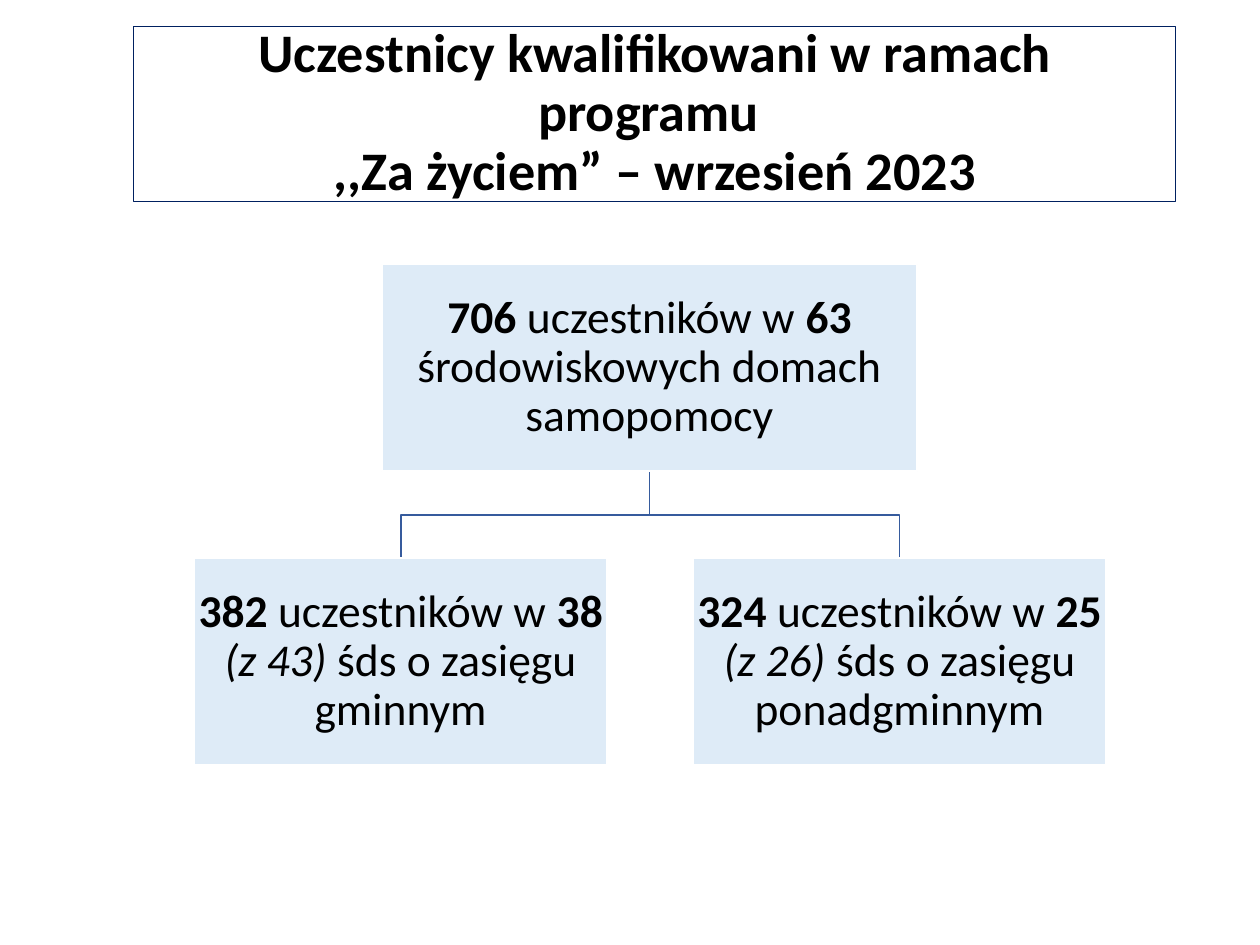
from pptx import Presentation
from pptx.dml.color import RGBColor
from pptx.enum.shapes import MSO_SHAPE
from pptx.enum.text import MSO_ANCHOR, MSO_AUTO_SIZE, PP_ALIGN
from pptx.util import Inches, Pt

BOX_H = 1.64
ROOT = (3.03, 2.1, 4.25, BOX_H)
CHILDREN = [(x, 4.43, 3.28, BOX_H) for x in (1.54, 5.5)]
ROOT_RUNS = [("706 ", "b"), ("uczestników w ", ""), ("63", "b"),
             (" środowiskowych domach samopomocy", "")]
CHILD_DATA = [("382", "38", "43", "gminnym"), ("324", "25", "26", "ponadgminnym")]


def rgb(value):
    """Return the colour for a hex string."""
    return RGBColor.from_string(value)


def set_line(sp, color, width):
    """Give a shape a solid outline."""
    sp.line.color.rgb = rgb(color)
    sp.line.width = Pt(width)


def format_paragraph(p, size):
    """Apply the slide's common paragraph style."""
    p.alignment = PP_ALIGN.CENTER
    p.line_spacing = 0.9
    p.font.name = "Calibri"
    p.font.size = Pt(size)
    p.font.color.rgb = rgb("000000")


def add_title(s, box, text):
    """Place and format the title placeholder."""
    sp = s.shapes.title
    sp.left, sp.top, sp.width, sp.height = map(Inches, box)
    set_line(sp, "002060", 0.75)
    tf = sp.text_frame
    tf.text = text
    tf.word_wrap = True
    tf.auto_size = MSO_AUTO_SIZE.NONE
    tf.vertical_anchor = MSO_ANCHOR.MIDDLE
    p = tf.paragraphs[0]
    format_paragraph(p, 31)
    p.font.bold = True


def add_node(s, box, runs):
    """Add one chart box holding runs of (text, style letters)."""
    sp = s.shapes.add_shape(MSO_SHAPE.RECTANGLE, *map(Inches, box))
    sp.shadow.inherit = False
    sp.fill.solid()
    sp.fill.fore_color.rgb = rgb("DEEBF7")
    set_line(sp, "FFFFFF", 1)
    tf = sp.text_frame
    tf.word_wrap = True
    tf.vertical_anchor = MSO_ANCHOR.MIDDLE
    tf.margin_left = tf.margin_right = tf.margin_top = tf.margin_bottom = Inches(0.02)
    p = tf.paragraphs[0]
    format_paragraph(p, 26)
    for text, style in runs:
        r = p.add_run()
        r.text = text
        r.font.bold = "b" in style
        r.font.italic = "i" in style


def add_branch(s, parent, child):
    """Draw the elbow line from a parent box down to a child box."""
    x1, y1 = parent[0] + parent[2] / 2, parent[1] + parent[3]
    x2, y2 = child[0] + child[2] / 2, child[1]
    mid = (y1 + y2) / 2
    points = [(Inches(x), Inches(y)) for x, y in ((x1, mid), (x2, mid), (x2, y2))]
    fb = s.shapes.build_freeform(Inches(x1), Inches(y1))
    fb.add_line_segments(points, close=False)
    sp = fb.convert_to_shape()
    sp.shadow.inherit = False
    sp.fill.background()
    set_line(sp, "365B9D", 1)


def add_hierarchy(s, root, children):
    """Add the root box, its branches and the child boxes."""
    for child in children:
        add_branch(s, root, child)
    add_node(s, root, ROOT_RUNS)
    for child, (people, homes, total, reach) in zip(children, CHILD_DATA):
        add_node(s, child, [(f"{people} ", "b"), ("uczestników w", ""), (f" {homes} ", "b"),
                            (f"(z {total}) ", "i"), (f"śds o zasięgu {reach}", "")])


def main():
    """Build and save the slide."""
    prs = Presentation()
    prs.slide_width, prs.slide_height = Inches(10), Inches(7.5)
    s = prs.slides.add_slide(prs.slide_layouts[5])
    add_title(s, (1.06, 0.21, 8.27, 1.39),
              "Uczestnicy kwalifikowani w ramach programu \v,,Za życiem” – wrzesień 2023")
    add_hierarchy(s, ROOT, CHILDREN)
    prs.save("out.pptx")


if __name__ == "__main__":
    main()
